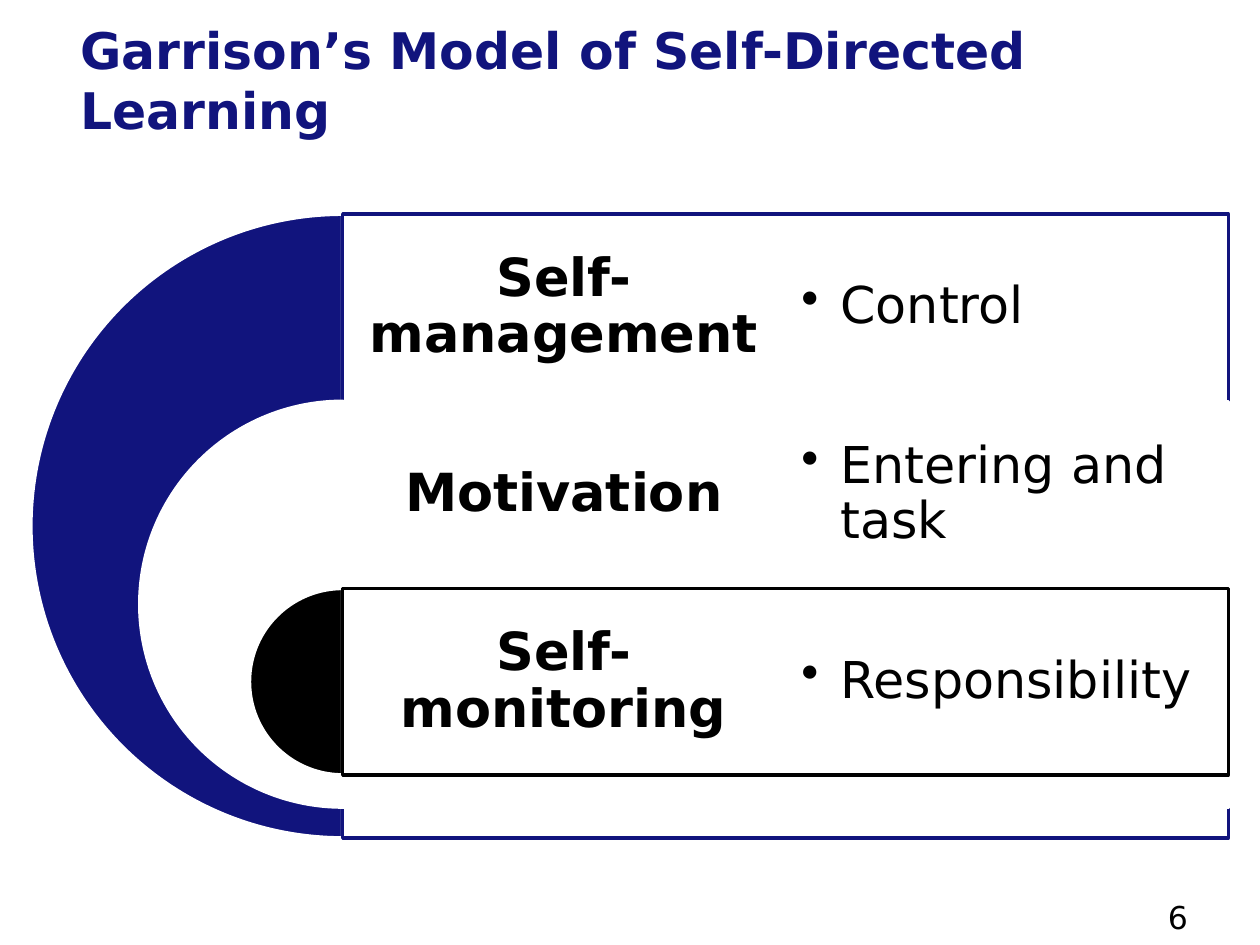
"""Build the slide on Garrison's model of self-directed learning."""
from lxml.etree import SubElement
from pptx import Presentation
from pptx.dml.color import RGBColor
from pptx.enum.shapes import MSO_SHAPE
from pptx.enum.text import MSO_ANCHOR, PP_ALIGN
from pptx.oxml.ns import qn
from pptx.util import Inches, Pt

NAVY, BLACK, WHITE = "11147D", "000000", "FFFFFF"


def rgb(code):
    return RGBColor.from_string(code)


def write(text, left, top, width, height, size, color=BLACK, bold=False,
          align=PP_ALIGN.LEFT, anchor=MSO_ANCHOR.MIDDLE, pad=0.12,
          indent=0, bullet=False, spacing=1.0):
    box = slide.shapes.add_textbox(
        Inches(left), Inches(top), Inches(width), Inches(height))
    frame = box.text_frame
    frame.word_wrap = True
    frame.vertical_anchor = anchor
    frame.margin_left = frame.margin_right = Inches(pad)
    frame.margin_top = frame.margin_bottom = Inches(min(pad, 0.12))
    line = frame.paragraphs[0]
    line.alignment = align
    line.line_spacing = spacing
    props = line._p.get_or_add_pPr()
    props.set("marL", str(Inches(indent)))
    if bullet:
        props.set("indent", str(-Inches(indent)))
        SubElement(props, qn("a:buChar"), char="•")
    run = line.add_run()
    run.text = text
    font = run.font
    font.name, font.size, font.bold = "DejaVu Sans", Pt(size), bold
    font.color.rgb = rgb(color)


deck = Presentation()
deck.slide_width, deck.slide_height = Inches(10), Inches(7.5)
slide = deck.slides.add_slide(deck.slide_layouts[6])

write("Garrison’s Model of Self-Directed Learning", 0.33, 0.17, 9.5, 0.92,
      28.8, color=NAVY, bold=True, pad=0.1, indent=0.21)

axis, half, step = 2.72, 3.51, 1.485
rows = [
    ("Self-management", "Control", 4.95, NAVY),
    ("Motivation", "Entering and task", 3.22, WHITE),
    ("Self-monitoring", "Responsibility", 1.48, BLACK),
]

for num, (name, point, size, color) in enumerate(rows):
    top = 1.7 + num * step
    parts = [
        (MSO_SHAPE.PIE, axis - size / 2, size, color, WHITE),
        (MSO_SHAPE.RECTANGLE, axis, 7.03, WHITE, color),
    ]
    for kind, left, width, fill, edge in parts:
        shape = slide.shapes.add_shape(
            kind, Inches(left), Inches(top), Inches(width), Inches(size))
        shape.shadow.inherit = False
        shape.fill.solid()
        shape.fill.fore_color.rgb = rgb(fill)
        shape.line.color.rgb = rgb(edge)
        shape.line.width = Pt(2)
        if kind == MSO_SHAPE.PIE:
            shape.adjustments[0] = 54
            shape.adjustments[1] = 162
        else:
            paint = shape.element.spPr.find(qn("a:solidFill"))
            SubElement(paint[0], qn("a:alpha"), val="90000")
    write(name, axis, top, half, 1.48, 30, bold=True,
          align=PP_ALIGN.CENTER, spacing=0.9)

for num, (name, point, size, color) in enumerate(rows):
    write(point, axis + half + 0.01, 1.7 + num * step, half, 1.48, 29,
          indent=0.31, bullet=True, spacing=0.9)

write("6", 9.17, 7.08, 0.83, 0.27, 18, anchor=MSO_ANCHOR.TOP, pad=0.1)
slide.shapes[-1].text_frame.margin_top = Inches(0.05)

deck.save("out.pptx")
